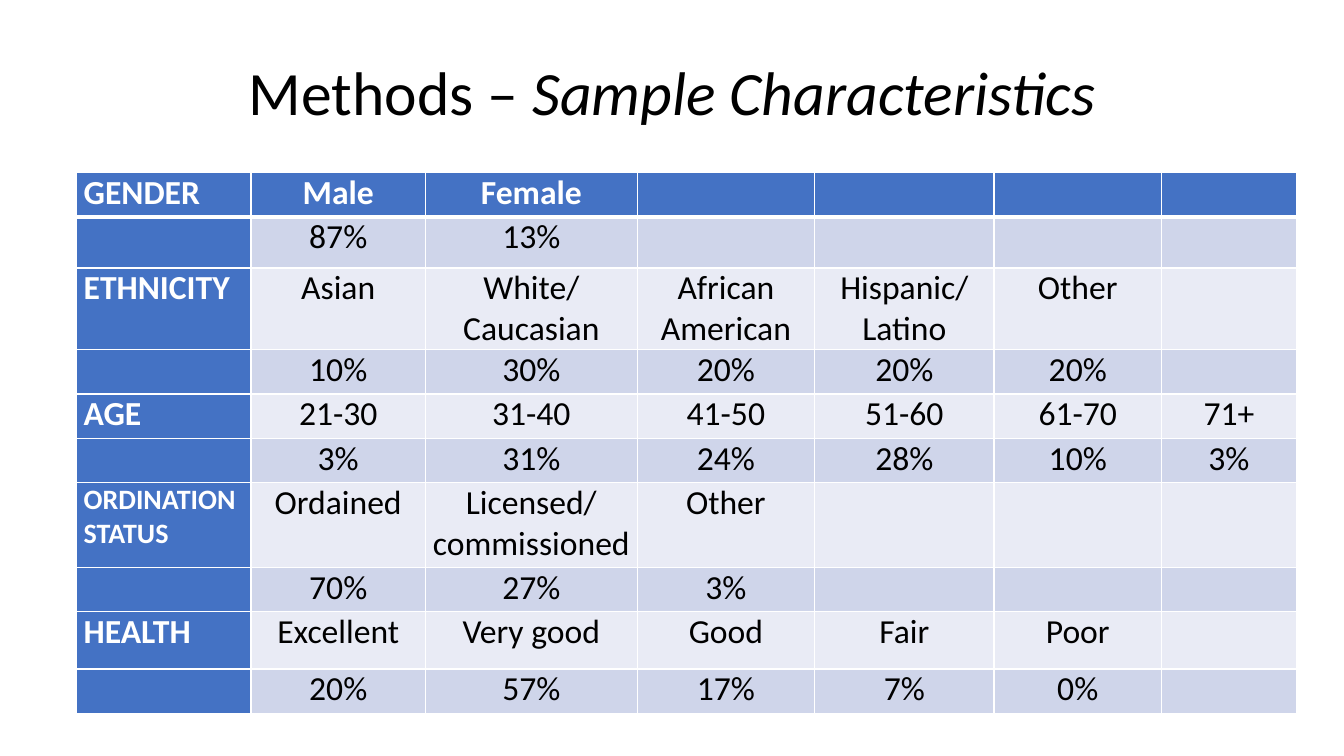
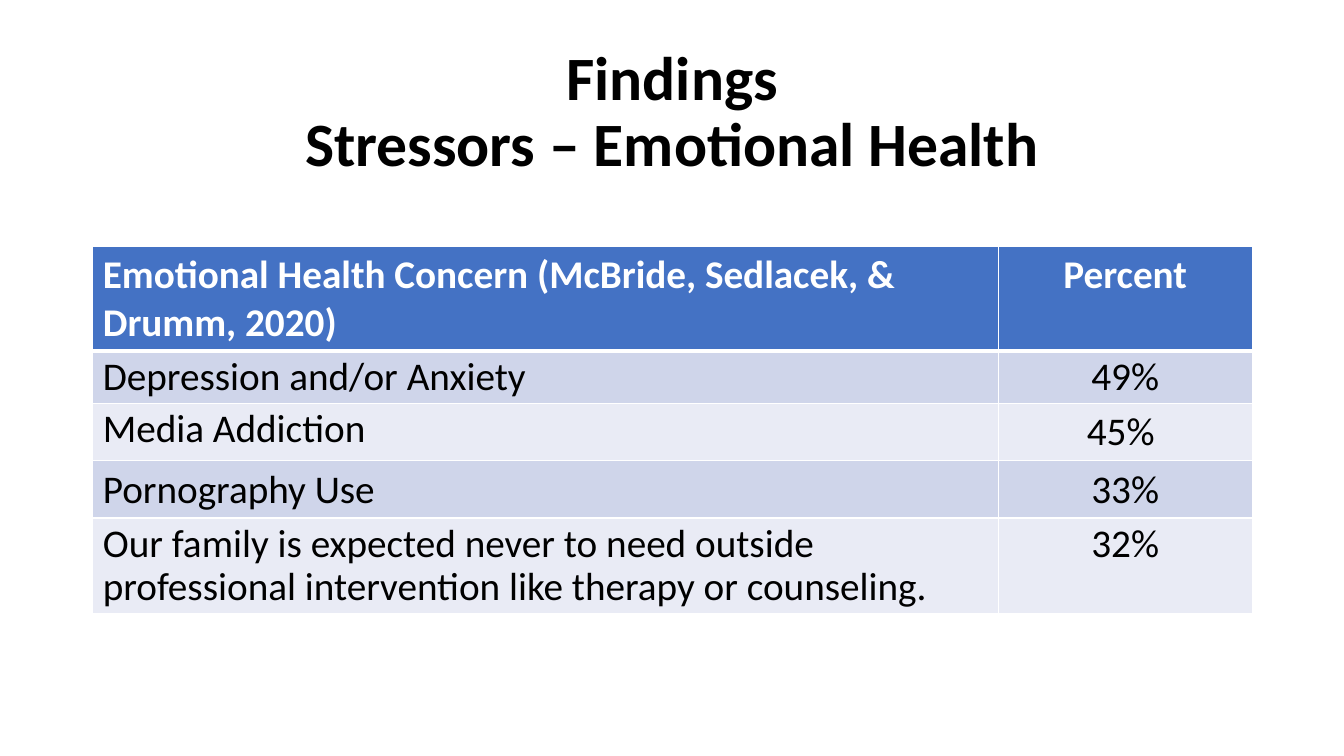
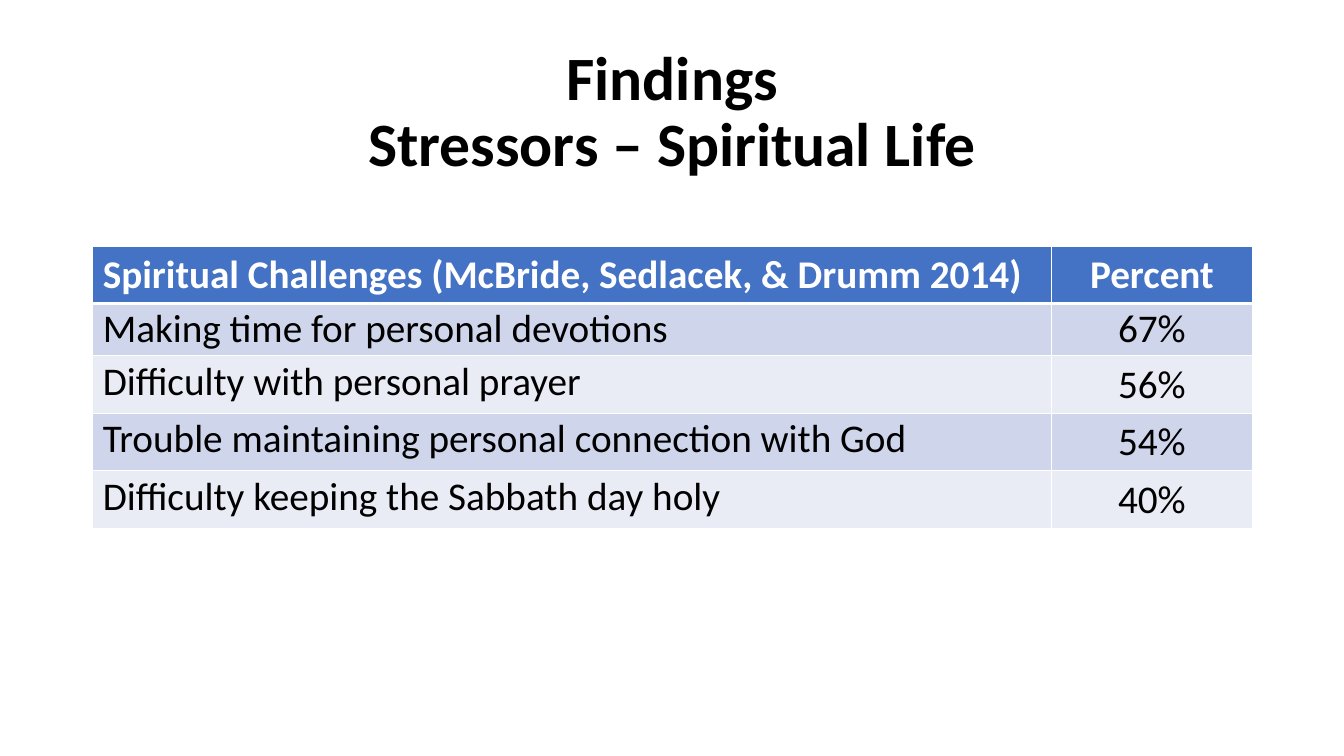
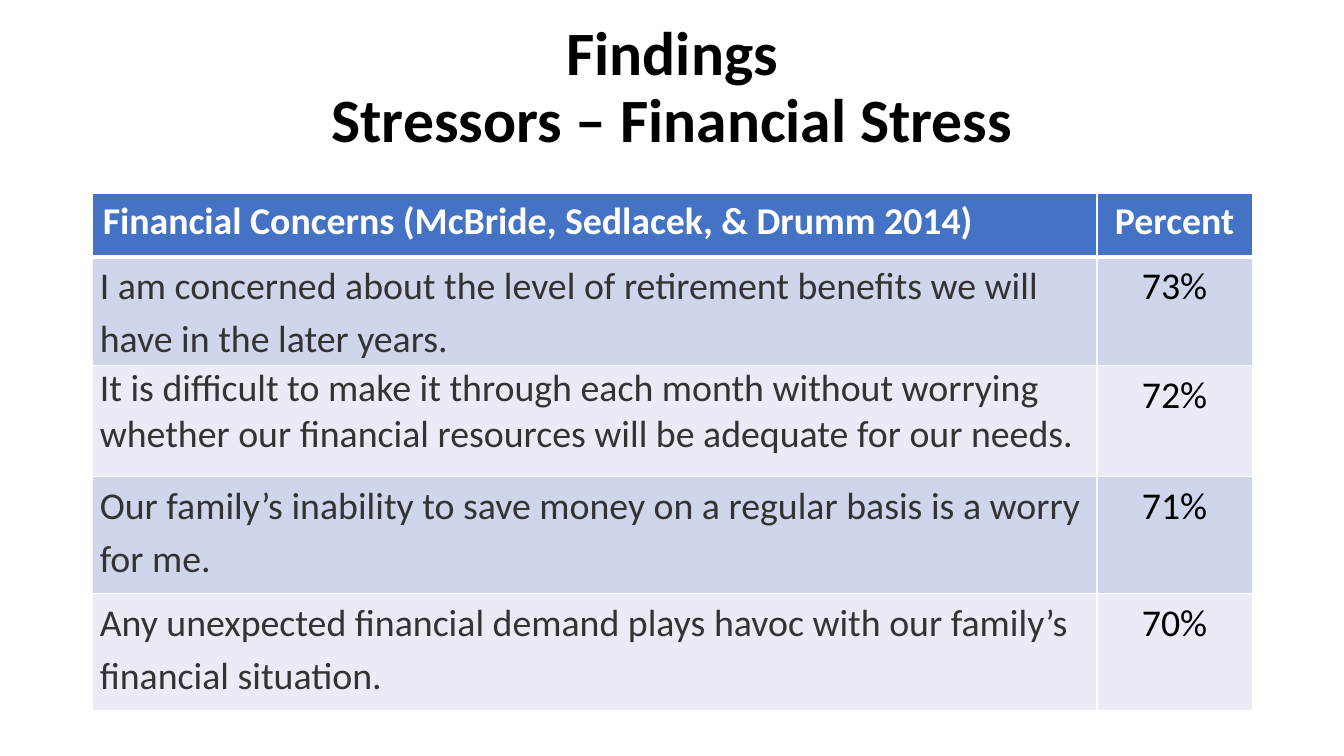
"""Build four survey slides: sample characteristics and three tables of stressors."""

from dataclasses import dataclass, replace

from lxml.etree import SubElement
from pptx import Presentation
from pptx.dml.color import RGBColor
from pptx.enum.text import MSO_ANCHOR, PP_ALIGN
from pptx.oxml.ns import qn
from pptx.slide import Slide
from pptx.table import _Cell as TableCell
from pptx.text.text import _Paragraph as Paragraph
from pptx.util import Emu, Pt

PX = 9144


@dataclass(frozen=True)
class Theme:
    font: str = "Calibri"
    ink: str = "000000"
    soft_ink: str = "333333"
    white: str = "FFFFFF"
    accent: str = "4472C4"
    bands: tuple[str, str] = ("E9EBF5", "CFD5EA")
    title_size: int = 44
    finding_size: int = 28
    finance_size: int = 27
    sample_size: int = 24
    small_size: int = 20
    rule: int = 1
    header_rule: int = 3


THEME = Theme()


@dataclass(frozen=True)
class Look:
    size: int
    color: str = THEME.ink
    bold: bool = False
    spacing: float = 1.0
    before: int = 0
    flush: bool = False


@dataclass(frozen=True)
class Row:
    height: int
    texts: tuple[str, ...]
    label: Look
    value: Look


@dataclass(frozen=True)
class Grid:
    left: int
    top: int
    columns: tuple[int, ...]
    rows: tuple[Row, ...]
    label_column: bool = False


@dataclass(frozen=True)
class Title:
    lead: str
    detail: str
    top: int = 40
    height: int = 145
    inline: bool = False


PLAIN = Look(THEME.finding_size)
TIGHT = replace(PLAIN, spacing=0.9, before=10)
HEADER = Look(THEME.finding_size, THEME.white, bold=True)
SAMPLE = Look(THEME.sample_size, flush=True)
SAMPLE_LABEL = replace(SAMPLE, color=THEME.white, bold=True)
SMALL_LABEL = replace(SAMPLE_LABEL, size=THEME.small_size)
FINANCE_HEADER = replace(HEADER, size=THEME.finance_size)
FINANCE_VALUE = Look(THEME.finance_size, spacing=1.15, flush=True)
FINANCE_LABEL = replace(FINANCE_VALUE, color=THEME.soft_ink)
FINANCE_CLOSE = replace(FINANCE_LABEL, spacing=1.0)


def px(length: int) -> Emu:
    """Turn px into EMU."""
    return Emu(length * PX)


def sample_row(height: int, *texts: str, label: Look = SAMPLE_LABEL, value: Look = SAMPLE) -> Row:
    """Describe a row of the sample table."""
    return Row(height, texts, label, value)


def finding_row(height: int, concern: str, percent: str, label: Look, value: Look | None = None) -> Row:
    """Describe a concern and its share, in one look unless two are given."""
    return Row(height, (concern, percent), label, value or label)


SLIDES: tuple[tuple[Title, Grid], ...] = (
    (
        Title("Methods – ", "Sample Characteristics", height=109, inline=True),
        Grid(76, 171, (173, 173, 210, 176, 178, 166, 134), (
            sample_row(44, "GENDER", "Male", "Female", value=SAMPLE_LABEL),
            sample_row(51, "", "87%", "13%"),
            sample_row(81, "ETHNICITY", "Asian", "White/ Caucasian", "African American",
                       "Hispanic/ Latino", "Other"),
            sample_row(44, "", "10%", "30%", "20%", "20%", "20%"),
            sample_row(44, "AGE", "21-30", "31-40", "41-50", "51-60", "61-70", "71+"),
            sample_row(44, "", "3%", "31%", "24%", "28%", "10%", "3%"),
            sample_row(84, "ORDINATION STATUS", "Ordained", "Licensed/ commissioned", "Other",
                       label=SMALL_LABEL),
            sample_row(44, "", "70%", "27%", "3%"),
            sample_row(57, "HEALTH", "Excellent", "Very good", "Good", "Fair", "Poor"),
            sample_row(44, "", "20%", "57%", "17%", "7%", "0%"),
        ), label_column=True),
    ),
    (
        Title("Findings", "Stressors – Emotional Health"),
        Grid(92, 244, (898, 252), (
            finding_row(104, "Emotional Health Concern (McBride, Sedlacek, & Drumm, 2020)",
                        "Percent", HEADER),
            finding_row(52, "Depression and/or Anxiety", "49%", TIGHT),
            finding_row(57, "Media Addiction", "45% ", TIGHT, PLAIN),
            finding_row(57, "Pornography Use", "33%", PLAIN),
            finding_row(95, "Our family is expected never to need outside professional "
                        "intervention like therapy or counseling.", "32%", TIGHT),
        )),
    ),
    (
        Title("Findings", "Stressors – Spiritual Life"),
        Grid(92, 244, (951, 199), (
            finding_row(57, "Spiritual Challenges (McBride, Sedlacek, & Drumm 2014)",
                        "Percent", HEADER),
            finding_row(52, "Making time for personal devotions", "67%", TIGHT),
            finding_row(57, "Difficulty with personal prayer", "56%", TIGHT, PLAIN),
            finding_row(57, "Trouble maintaining personal connection with God", "54%", TIGHT, PLAIN),
            finding_row(57, "Difficulty keeping the Sabbath day holy", "40%", TIGHT, PLAIN),
        )),
    ),
    (
        Title("Findings", "Stressors – Financial Stress", top=16),
        Grid(92, 192, (996, 154), (
            finding_row(63, "Financial Concerns (McBride, Sedlacek, & Drumm 2014)",
                        "Percent", FINANCE_HEADER),
            finding_row(108, "I am concerned about the level of retirement benefits we will "
                        "have in the later years.", "73%", FINANCE_LABEL, FINANCE_VALUE),
            finding_row(110, "It is difficult to make it through each month without worrying "
                        "whether our financial resources will be adequate for our needs.",
                        "72%", FINANCE_CLOSE, FINANCE_VALUE),
            finding_row(116, "Our family’s inability to save money on a regular basis is a worry "
                        "for me.", "71%", FINANCE_LABEL, FINANCE_VALUE),
            finding_row(116, "Any unexpected financial demand plays havoc with our family’s "
                        "financial situation.", "70%", FINANCE_LABEL, FINANCE_VALUE),
        )),
    ),
)


def style_paragraph(paragraph: Paragraph, look: Look, align: PP_ALIGN) -> None:
    """Apply a look and an alignment to a paragraph."""
    paragraph.alignment = align
    paragraph.line_spacing = look.spacing
    paragraph.space_before = Pt(look.before)
    font = paragraph.font
    font.name, font.size, font.bold = THEME.font, Pt(look.size), look.bold
    font.color.rgb = RGBColor.from_string(look.color)


def draw_title(slide: Slide, title: Title) -> None:
    """Draw a centred title on one line with an italic end, or on two bold lines."""
    frame = slide.shapes.add_textbox(px(92), px(title.top), px(1150), px(title.height)).text_frame
    frame.word_wrap = True
    frame.vertical_anchor = MSO_ANCHOR.MIDDLE
    paragraph = frame.paragraphs[0]
    look = Look(THEME.title_size, bold=not title.inline, spacing=0.9)
    style_paragraph(paragraph, look, PP_ALIGN.CENTER)
    paragraph.add_run().text = title.lead
    if not title.inline:
        paragraph.add_line_break()
    detail = paragraph.add_run()
    detail.text = title.detail
    if title.inline:
        detail.font.italic = True


def draw_borders(cell: TableCell, row_index: int) -> None:
    """Rule a cell in white, thicker under the header row."""
    properties = cell._tc.get_or_add_tcPr()
    widths = {
        "a:lnL": THEME.rule,
        "a:lnR": THEME.rule,
        "a:lnT": THEME.header_rule if row_index == 1 else THEME.rule,
        "a:lnB": THEME.header_rule if row_index == 0 else THEME.rule,
    }
    for side, width in widths.items():
        line = SubElement(properties, qn(side), w=str(Pt(width)))
        fill = SubElement(line, qn("a:solidFill"))
        SubElement(fill, qn("a:srgbClr"), val=THEME.white)


def draw_cell(cell: TableCell, text: str, look: Look, align: PP_ALIGN, fill: str, row_index: int) -> None:
    """Fill, rule and letter one cell."""
    draw_borders(cell, row_index)
    cell.fill.solid()
    cell.fill.fore_color.rgb = RGBColor.from_string(fill)
    cell.margin_left = cell.margin_right = px(7 if look.flush else 10)
    cell.margin_top = cell.margin_bottom = px(0 if look.flush else 5)
    paragraph = cell.text_frame.paragraphs[0]
    style_paragraph(paragraph, look, align)
    if text:
        paragraph.add_run().text = text


def draw_grid(slide: Slide, grid: Grid) -> None:
    """Draw a table with a header row, banded rows and centred values."""
    width, height = sum(grid.columns), sum(row.height for row in grid.rows)
    table = slide.shapes.add_table(
        len(grid.rows), len(grid.columns), px(grid.left), px(grid.top), px(width), px(height)
    ).table
    table.horz_banding = False
    table.first_col = grid.label_column
    for column, column_width in zip(table.columns, grid.columns):
        column.width = px(column_width)
    for row_index, row in enumerate(grid.rows):
        table.rows[row_index].height = px(row.height)
        for column_index in range(len(grid.columns)):
            is_label = column_index == 0
            is_head = row_index == 0 or (is_label and grid.label_column)
            draw_cell(
                table.cell(row_index, column_index),
                row.texts[column_index] if column_index < len(row.texts) else "",
                row.label if is_label else row.value,
                PP_ALIGN.LEFT if is_label else PP_ALIGN.CENTER,
                THEME.accent if is_head else THEME.bands[row_index % 2],
                row_index,
            )


def main() -> None:
    """Build and save the presentation."""
    deck = Presentation()
    deck.slide_width, deck.slide_height = px(1333), px(750)
    for title, grid in SLIDES:
        slide = deck.slides.add_slide(deck.slide_layouts[6])
        draw_title(slide, title)
        draw_grid(slide, grid)
    deck.save("out.pptx")


if __name__ == "__main__":
    main()
